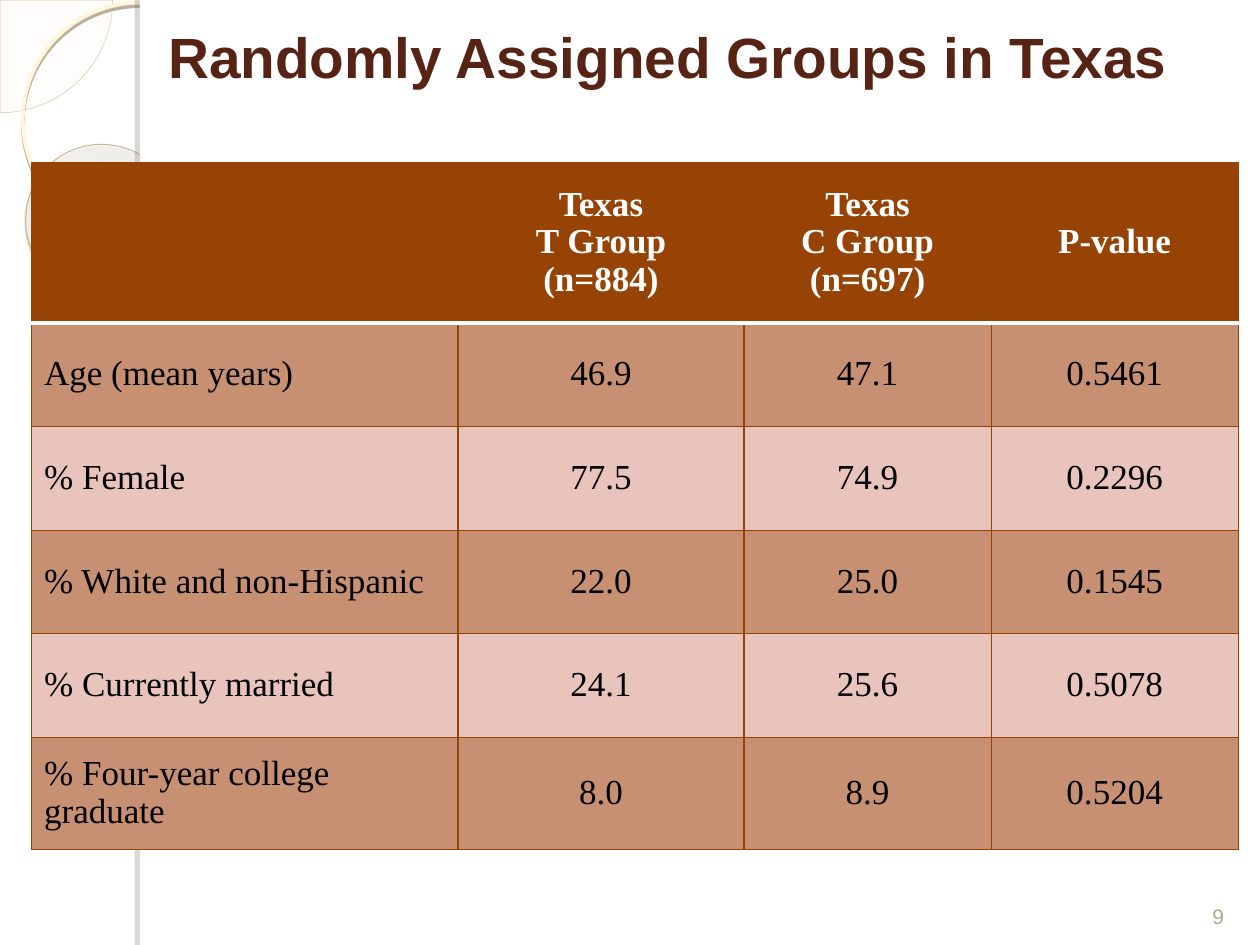
from lxml import etree
from pptx import Presentation
from pptx.dml.color import RGBColor
from pptx.enum.shapes import MSO_SHAPE
from pptx.enum.text import MSO_ANCHOR, PP_ALIGN
from pptx.oxml import parse_xml
from pptx.util import Pt

CENTER, LEFT = PP_ALIGN.CENTER, PP_ALIGN.LEFT
MIDDLE, BOTTOM = MSO_ANCHOR.MIDDLE, MSO_ANCHOR.BOTTOM
PIE, ELLIPSE, DONUT, RECT = (MSO_SHAPE.PIE, MSO_SHAPE.OVAL, MSO_SHAPE.DONUT,
                             MSO_SHAPE.RECTANGLE)
NS = "http://schemas.openxmlformats.org/drawingml/2006/main"

TITLE = "Randomly Assigned Groups in Texas"
PAGE = "9"
HEADER = ["", "Texas\nT Group\n(n=884)", "Texas\nC Group\n(n=697)", "P-value"]
ROWS = [
    ["Age (mean years)", "46.9", "47.1", "0.5461"],
    ["% Female", "77.5", "74.9", "0.2296"],
    ["% White and non-Hispanic", "22.0", "25.0", "0.1545"],
    ["% Currently married", "24.1", "25.6", "0.5078"],
    ["% Four-year college graduate", "8.0", "8.9", "0.5204"],
]
COL_WIDTHS = [243.7, 163.5, 141.2, 141.2]
ROW_HEIGHTS = [91.7, 59.2, 59.2, 59.2, 59.2, 64]
BROWN, WHITE, BLACK = "964305", "FFFFFF", "000000"
BANDS = ["C79073", "E8C4BC"]


def rgb(color):
    return RGBColor.from_string(color)


def drawing(xml):
    """Parse DrawingML whose root element starts with the a: prefix."""
    return parse_xml(xml.replace(" ", f' xmlns:a="{NS}" ', 1))


def solid(color, alpha=100):
    return (f'<a:solidFill ><a:srgbClr val="{color}">'
            f'<a:alpha val="{alpha * 1000}"/></a:srgbClr></a:solidFill>')


def add_shape(s, kind, box, fill=None, line=None):
    sp = s.shapes.add_shape(kind, *map(Pt, box))
    sp.shadow.inherit = False
    if fill:
        sp.fill.solid()
        sp.fill.fore_color.rgb = rgb(fill)
    else:
        sp.fill.background()
    if line:
        sp.line.color.rgb = rgb(line[0])
        sp.line.width = Pt(line[1])
    else:
        sp.line.fill.background()
    return sp


def add_shadow(sp, color, alpha, blur, dist, angle):
    effects = sp._element.spPr.find(f"{{{NS}}}effectLst")
    effects.append(drawing(
        f'<a:outerShdw blurRad="{Pt(blur)}" dist="{Pt(dist)}" '
        f'dir="{angle * 60000}" algn="tl" rotWithShape="0">'
        f'<a:srgbClr val="{color}"><a:alpha val="{alpha * 1000}"/></a:srgbClr>'
        f'</a:outerShdw>'))


def replace_fill(sp, old, xml):
    spPr = sp._element.spPr
    spPr.replace(spPr.find(f"{{{NS}}}{old}"), drawing(xml))


def write(tf, text, size, font, color, bold=False, align=CENTER, spacing=None):
    tf.text = text
    tf.word_wrap = True
    for p in tf.paragraphs:
        p.alignment = align
        p.line_spacing = spacing
        f = p.font
        f.size, f.name, f.bold = Pt(size), font, bold
        f.color.rgb = rgb(color)
        for r in p.runs:
            r.font.size, r.font.name, r.font.bold = Pt(size), font, bold
            r.font.color.rgb = rgb(color)


def add_text(s, box, anchor, *style):
    tf = s.shapes.add_textbox(*map(Pt, box)).text_frame
    write(tf, *style)
    tf.vertical_anchor = anchor


def set_borders(cell, top, bottom):
    tcPr = cell._tc.get_or_add_tcPr()
    thin = (BROWN, 0.75)
    sides = [("L", thin), ("R", thin), ("T", top), ("B", bottom)]
    for i, (side, (color, width)) in enumerate(sides):
        ln = etree.fromstring(
            f'<a:ln{side} xmlns:a="{NS}" w="{Pt(width)}">{solid(color)}</a:ln{side}>')
        tcPr.insert(i, ln)


def add_decoration(s):
    pie = add_shape(s, PIE, (-64.2, -64.2, 128.6, 128.6), WHITE, ("D3C39F", 0.25))
    pie.adjustments[0], pie.adjustments[1] = 0, 54
    replace_fill(pie, "solidFill", solid("FEFAF4", 33))

    ring = add_shape(s, ELLIPSE, (13, 1.5, 134, 134), line=("FFF6DB", 2.15))
    add_shadow(ring, "AFA58D", 85, 0, 2, 90)

    donut = add_shape(s, DONUT, (14.4, 82.8, 88.6, 87.1), WHITE, ("C7B893", 0.58))
    donut.adjustments[0] = 0.118
    donut.rotation = 38.6
    stops = "".join(
        f'<a:gs pos="{pos * 1000}"><a:srgbClr val="{color}">'
        f'<a:alpha val="{alpha * 1000}"/></a:srgbClr></a:gs>'
        for pos, color, alpha in [(0, "FFFCF6", 70), (70, "FFFEFB", 55),
                                  (100, "F0D28E", 60)])
    replace_fill(donut, "solidFill",
                 f'<a:gradFill rotWithShape="1"><a:gsLst>{stops}</a:gsLst>'
                 '<a:path path="circle"><a:fillToRect l="-408000" t="-50000" '
                 'r="508000" b="150000"/></a:path></a:gradFill>')
    add_shadow(donut, "5A5444", 35, 1, 1.2, 75)

    add_shape(s, RECT, (80, 0, 640, 540), WHITE)
    strip = add_shape(s, RECT, (80, 0, 5.8, 540), WHITE)
    add_shadow(strip, "706B5F", 25, 0, 3, 180)


def add_groups_table(s):
    data = [HEADER] + ROWS
    table = s.shapes.add_table(len(data), len(HEADER), Pt(18), Pt(92.9),
                               Pt(sum(COL_WIDTHS)), Pt(sum(ROW_HEIGHTS))).table
    table.first_row = table.horz_banding = False
    for column, width in zip(table.columns, COL_WIDTHS):
        column.width = Pt(width)
    for i, (row, height) in enumerate(zip(data, ROW_HEIGHTS)):
        table.rows[i].height = Pt(height)
        head = i == 0
        top = (WHITE, 2) if i == 1 else (BROWN, 0.75)
        bottom = (WHITE, 2) if head else (BROWN, 0.75)
        for j, text in enumerate(row):
            cell = table.cell(i, j)
            cell.fill.solid()
            cell.fill.fore_color.rgb = rgb(BROWN if head else BANDS[(i - 1) % 2])
            set_borders(cell, top, bottom)
            write(cell.text_frame, text, 20, "Times New Roman",
                  WHITE if head else BLACK, head,
                  CENTER if head or j else LEFT, 0.96)
            cell.vertical_anchor = MIDDLE


def main():
    prs = Presentation()
    prs.slide_width, prs.slide_height = Pt(720), Pt(540)
    s = prs.slides.add_slide(prs.slide_layouts[6])
    add_decoration(s)
    add_text(s, (67, 5.8, 629, 52.6), MIDDLE, TITLE, 32.4, "Arial", "572314", True)
    add_text(s, (678.2, 496.8, 36, 37.4), BOTTOM, PAGE, 12, "Arial", "B5A788")
    add_groups_table(s)
    prs.save("out.pptx")


if __name__ == "__main__":
    main()
